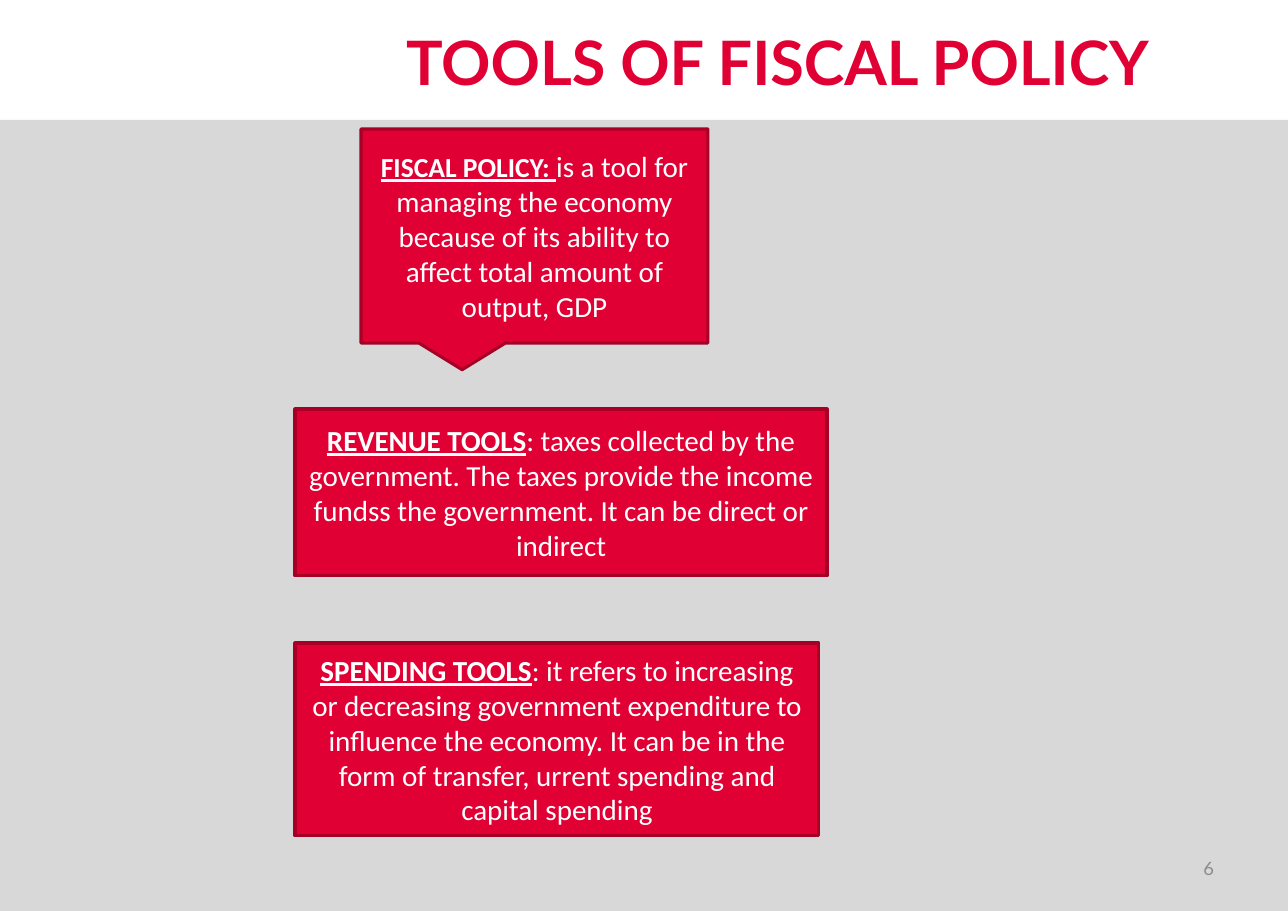
from pptx import Presentation
from pptx.dml.color import RGBColor
from pptx.enum.shapes import MSO_SHAPE as Preset
from pptx.enum.text import MSO_ANCHOR as Anchor, MSO_AUTO_SIZE as AutoSize, PP_ALIGN as Align
from pptx.util import Pt

EMU_PER_PX = 8298
COLOURS = {"red": "E00034", "dark_red": "A60026", "grey": "D8D8D8",
           "number": "8C8C8C", "white": "FFFFFF"}


def px(*lengths):
    return [length * EMU_PER_PX for length in lengths]


class FiscalSlide:
    """Draws styled elements on one slide, with lengths in px."""

    def __init__(self, presentation):
        self.slide = presentation.slides.add_slide(presentation.slide_layouts[5])

    def fill_text(self, shape, runs, align=Align.CENTER):
        frame = shape.text_frame
        frame.word_wrap = True
        frame.auto_size = AutoSize.NONE
        frame.vertical_anchor = Anchor.MIDDLE
        paragraph = frame.paragraphs[0]
        paragraph.alignment = align
        for text, colour, style in runs:
            run = paragraph.add_run()
            run.text = text
            run.font.color.rgb = RGBColor.from_string(COLOURS[colour])
            for name, value in style.items():
                setattr(run.font, name, value)

    def title(self, box, text):
        shape = self.slide.shapes.title
        shape.left, shape.top, shape.width, shape.height = px(*box)
        self.fill_text(shape, [(text, "red", {"name": "Lato", "size": Pt(40), "bold": True})])

    def panel(self, box, fill, line=None, preset=Preset.RECTANGLE):
        shape = self.slide.shapes.add_shape(preset, *px(*box))
        shape.shadow.inherit = False
        shape.fill.solid()
        shape.fill.fore_color.rgb = RGBColor.from_string(COLOURS[fill])
        if line:
            shape.line.color.rgb = RGBColor.from_string(COLOURS[line])
            shape.line.width = Pt(2)
        else:
            shape.line.fill.background()
        return shape

    def definition(self, box, term, meaning, preset=Preset.RECTANGLE, term_size=19):
        shape = self.panel(box, "red", "dark_red", preset)
        self.fill_text(shape, [
            (term, "white", {"name": "Calibri", "size": Pt(term_size),
                             "bold": True, "underline": True}),
            (meaning, "white", {"name": "Calibri", "size": Pt(19), "bold": False}),
        ])

    def number(self, box, text):
        shape = self.slide.shapes.add_textbox(*px(*box))
        self.fill_text(shape, [(text, "number", {"name": "Lato", "size": Pt(12)})], Align.RIGHT)


def main():
    presentation = Presentation()
    presentation.slide_width, presentation.slide_height = px(1288, 911)
    page = FiscalSlide(presentation)
    page.panel((0, 120, 1288, 791), "grey")
    page.title((330, 22, 895, 79), "TOOLS OF FISCAL POLICY")
    page.number((924, 844, 301, 49), "6")
    page.definition(
        (361, 129, 347, 214), "FISCAL POLICY: ",
        "is a tool for managing the economy because of its ability to affect "
        "total amount of output, GDP",
        Preset.RECTANGULAR_CALLOUT, 18)
    page.definition(
        (295, 409, 532, 167), "REVENUE TOOLS",
        ": taxes collected by the government. The taxes provide the income "
        "fundss the government. It can be direct or indirect")
    page.definition(
        (295, 643, 524, 193), "SPENDING TOOLS",
        ": it refers to increasing or decreasing government expenditure to "
        "influence the economy. It can be in the form of transfer, urrent "
        "spending and capital spending")
    presentation.save("out.pptx")


if __name__ == "__main__":
    main()
